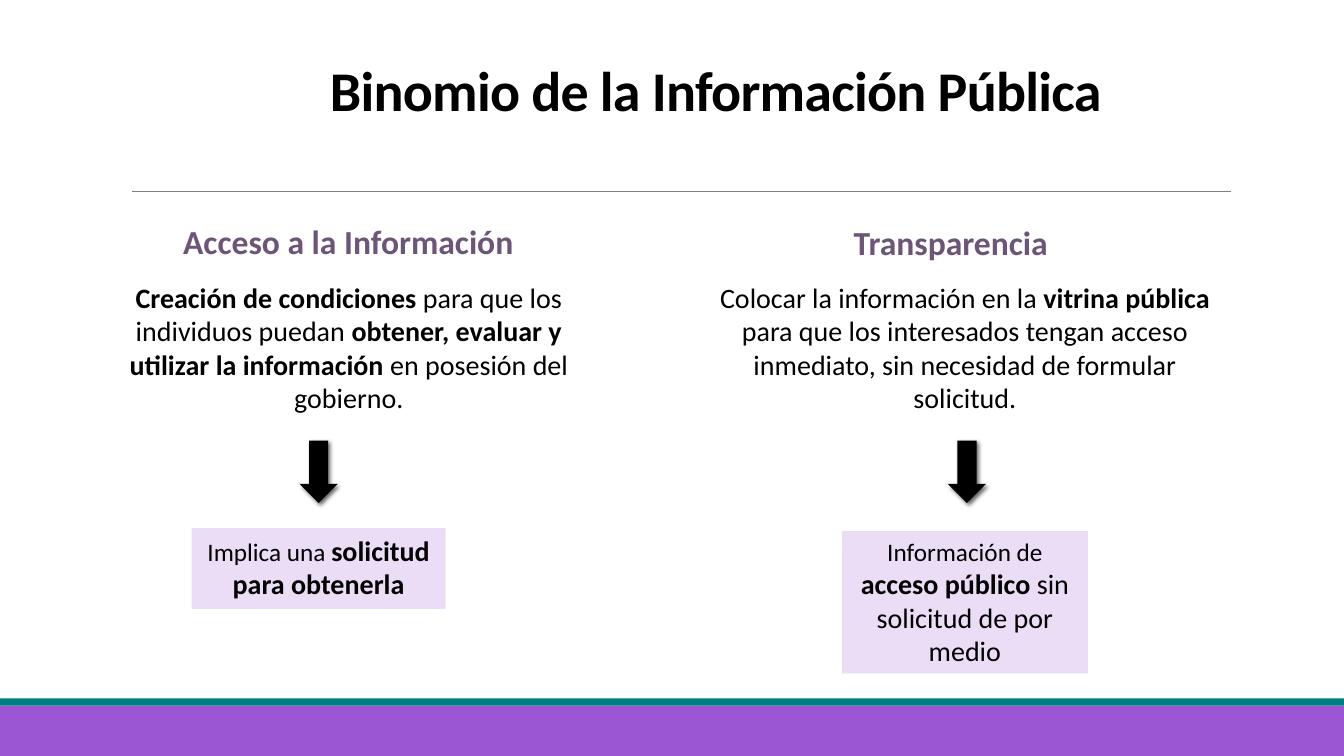
from lxml import etree
from pptx import Presentation
from pptx import util as u
from pptx.dml.color import RGBColor
from pptx.enum import shapes, text
from pptx.oxml.ns import qn

BLACK = RGBColor(0x00, 0x00, 0x00)
GRAY = RGBColor(0x80, 0x80, 0x80)
PURPLE = RGBColor(0x9B, 0x57, 0xD3)
TEAL = RGBColor(0x00, 0x80, 0x80)
PLUM = RGBColor(0x6C, 0x55, 0x78)
LILAC = RGBColor(0xEB, 0xDD, 0xF6)
SHAPE = shapes.MSO_SHAPE
FIT = text.MSO_AUTO_SIZE

COLUMNS = [
    dict(
        heading=("Acceso a la Información", (1.7, 2.14, 3.51, 0.51)),
        body=([("Creación de condiciones ", 20, True),
               ("para que los individuos puedan ", 20, False),
               ("obtener, evaluar y utilizar la información ", 20, True),
               ("en posesión del gobierno.", 20, False)],
              (1.06, 2.73, 4.8, 1.45)),
        arrow=(2.85, 4.49, 0.62, 0.38),
        result=([("Implica una ", 18, False),
                 ("solicitud para obtenerla", 20, True)],
                (1.9, 5.24, 2.52, 0.8)),
    ),
    dict(
        heading=("Transparencia", (8.09, 2.15, 2.68, 0.51)),
        body=([("Colocar la información en la ", 20, False),
               ("vitrina pública ", 20, True),
               ("para que los interesados tengan acceso inmediato, "
                "sin necesidad de formular solicitud.", 20, False)],
              (6.96, 2.73, 5.22, 1.45)),
        arrow=(9.28, 4.49, 0.62, 0.38),
        result=([("Información de ", 18, False),
                 ("acceso público", 20, True),
                 (" sin solicitud de por medio", 20, False)],
                (8.35, 5.27, 2.44, 1.41)),
    ),
]


def inches(values):
    return [u.Inches(v) for v in values]


class Deck:
    font = "Calibri"

    def __init__(self, prs):
        self.s = prs.slides.add_slide(prs.slide_layouts[5])

    def fill_text(self, sp, runs, color=BLACK, anchor=text.MSO_ANCHOR.TOP,
                  fit=FIT.SHAPE_TO_FIT_TEXT):
        tf = sp.text_frame
        for name, value in dict(word_wrap=True, auto_size=fit, vertical_anchor=anchor).items():
            setattr(tf, name, value)
        p = tf.paragraphs[0]
        p.alignment = text.PP_ALIGN.CENTER
        for words, size, bold in runs:
            r = p.add_run()
            r.text = words
            for name, value in dict(name=self.font, size=u.Pt(size), bold=bold).items():
                setattr(r.font, name, value)
            r.font.color.rgb = color
        return p

    def title(self, words, box):
        sp = self.s.shapes.title
        for name, value in zip(("left", "top", "width", "height"), inches(box)):
            setattr(sp, name, value)
        p = self.fill_text(sp, [(words, 40, True)], anchor=text.MSO_ANCHOR.BOTTOM, fit=FIT.NONE)
        p.line_spacing = 0.85
        p.runs[0].font._element.set("spc", "-50")

    def text(self, runs, box, color=BLACK):
        self.fill_text(self.s.shapes.add_textbox(*inches(box)), runs, color)

    def shape(self, kind, box, fill):
        sp = self.s.shapes.add_shape(kind, *inches(box))
        sp.shadow.inherit = False
        sp.fill.solid()
        sp.fill.fore_color.rgb = fill
        sp.line.fill.background()
        return sp

    def box(self, runs, box):
        self.fill_text(self.shape(SHAPE.RECTANGLE, box, LILAC), runs)

    def arrow(self, box):
        sp = self.shape(SHAPE.RIGHT_ARROW, box, BLACK)
        sp.rotation = 90
        effects = sp._element.spPr.find(qn("a:effectLst"))
        shadow = etree.SubElement(effects, qn("a:outerShdw"), blurRad=str(u.Pt(3)),
                                  dist=str(u.Pt(2)), dir="2700000", rotWithShape="0")
        color = etree.SubElement(shadow, qn("a:srgbClr"), val=str(BLACK))
        etree.SubElement(color, qn("a:alpha"), val="60000")

    def line(self, ends, color, width):
        c = self.s.shapes.add_connector(shapes.MSO_CONNECTOR.STRAIGHT, *inches(ends))
        c.line.color.rgb = color
        c.line.width = u.Pt(width)
        etree.SubElement(c._element.spPr, qn("a:effectLst"))


def main():
    prs = Presentation()
    prs.slide_width, prs.slide_height = inches((13.33, 7.5))
    deck = Deck(prs)
    deck.shape(SHAPE.RECTANGLE, (0, 7, 13.33, 0.5), PURPLE)
    deck.shape(SHAPE.RECTANGLE, (0, 6.93, 13.33, 0.07), TEAL)
    deck.line((1.31, 1.9, 12.21, 1.9), GRAY, 0.5)
    deck.title("Binomio de la Información Pública", (2.82, 0.67, 8.56, 0.6))
    for column in COLUMNS:
        heading, place = column["heading"]
        deck.text([(heading, 24, True)], place, PLUM)
        deck.text(*column["body"])
        deck.arrow(column["arrow"])
        deck.box(*column["result"])
    prs.save("out.pptx")


if __name__ == "__main__":
    main()
